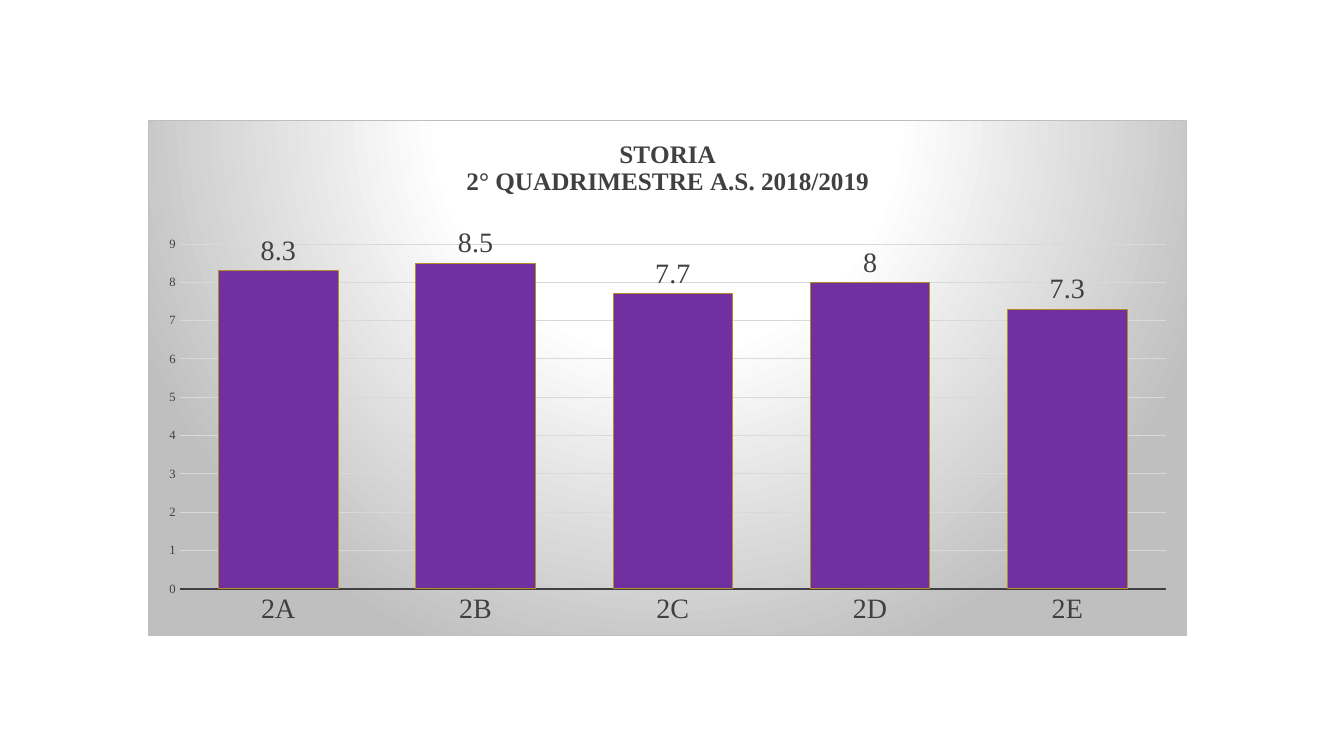
from lxml import etree
from pptx import Presentation
from pptx.chart.data import CategoryChartData
from pptx.dml.color import RGBColor
from pptx.enum.chart import XL_CHART_TYPE, XL_LABEL_POSITION, XL_TICK_MARK
from pptx.oxml import parse_xml
from pptx.util import Pt

COLUMNS = XL_CHART_TYPE.COLUMN_CLUSTERED
OUTSIDE = XL_LABEL_POSITION.OUTSIDE_END
NO_TICK = XL_TICK_MARK.NONE
FONT = "Times New Roman"
GREY = "404040"
NS = ('xmlns:c="http://schemas.openxmlformats.org/drawingml/2006/chart" '
      'xmlns:a="http://schemas.openxmlformats.org/drawingml/2006/main"')


def rgb(color):
    return RGBColor.from_string(color)


def style_font(font, size, color=GREY, bold=False):
    font.name = FONT
    font.size = Pt(size)
    font.bold = bold
    font.color.rgb = rgb(color)


prs = Presentation()
prs.slide_width = Pt(960)
prs.slide_height = Pt(540)
s = prs.slides.add_slide(prs.slide_layouts[6])

data = CategoryChartData(number_format="General")
data.categories = ["2A", "2B", "2C", "2D", "2E"]
data.add_series("Series 1", [8.3, 8.5, 7.7, 8, 7.3])
chart = s.shapes.add_chart(COLUMNS, Pt(105.8), Pt(85.7), Pt(742.3), Pt(368.6), data).chart
style_font(chart.font, 10, "000000")
chart.has_legend = False

tf = chart.chart_title.text_frame
tf.text = "STORIA\n2° QUADRIMESTRE A.S. 2018/2019"
for p in tf.paragraphs:
    style_font(p.font, 18, bold=True)

cat_axis = chart.category_axis
cat_axis.major_tick_mark = NO_TICK
style_font(cat_axis.tick_labels.font, 20)
cat_axis.format.line.color.rgb = rgb(GREY)
cat_axis.format.line.width = Pt(1.5)

val_axis = chart.value_axis
val_axis.major_tick_mark = NO_TICK
val_axis.minimum_scale = 0
val_axis.maximum_scale = 9
val_axis.major_unit = 1
style_font(val_axis.tick_labels.font, 9)
val_axis.format.line.fill.background()
grid = val_axis.major_gridlines.format.line
grid.color.rgb = rgb("D9D9D9")
grid.width = Pt(0.75)

plot = chart.plots[0]
plot.gap_width = 65
plot.vary_by_categories = False
bars = plot.series[0]
bars.format.fill.solid()
bars.format.fill.fore_color.rgb = rgb("7030A0")
bars.format.line.color.rgb = rgb("B38D25")
bars.format.line.width = Pt(0.75)
labels = bars.data_labels
labels.show_value = True
labels.position = OUTSIDE
style_font(labels.font, 20)

plot_area = plot._element.getparent()
for old in plot_area.findall("{*}layout"):
    plot_area.remove(old)
plot_area.insert(0, parse_xml(
    f'<c:layout {NS}><c:manualLayout><c:layoutTarget val="inner"/>'
    '<c:xMode val="edge"/><c:yMode val="edge"/><c:x val="0.03"/><c:y val="0.24"/>'
    '<c:w val="0.95"/><c:h val="0.67"/></c:manualLayout></c:layout>'))

area = etree.fromstring(
    f'<c:spPr {NS}><a:gradFill><a:gsLst/><a:path path="circle">'
    '<a:fillToRect l="50000" t="-80000" r="50000" b="180000"/></a:path></a:gradFill>'
    '<a:ln w="9525"><a:solidFill><a:srgbClr val="BFBFBF"/></a:solidFill></a:ln></c:spPr>')
for pos, color in [(0, "FFFFFF"), (39, "FFFFFF"), (100, "BFBFBF")]:
    area[0][0].append(etree.fromstring(
        f'<a:gs {NS} pos="{pos * 1000}"><a:srgbClr val="{color}"/></a:gs>'))
plot_area.getparent().addnext(area)

prs.save("out.pptx")
